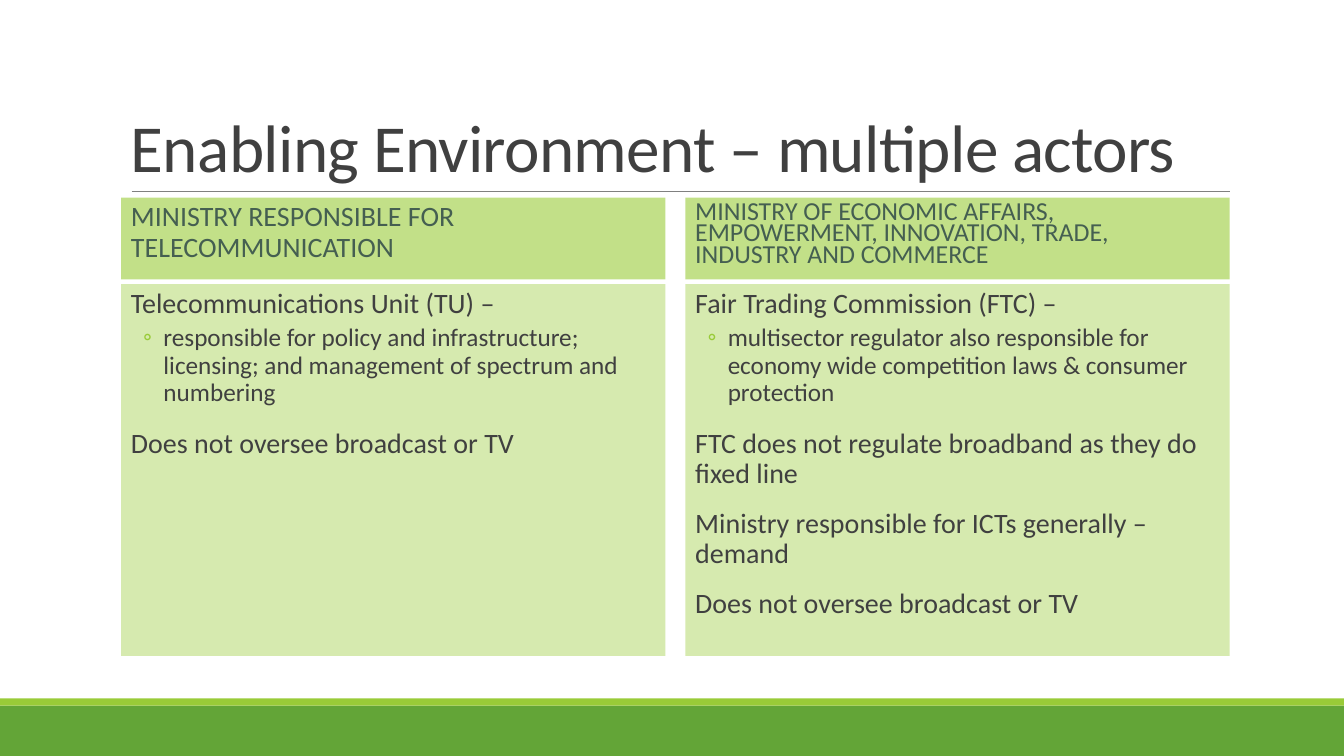
from lxml.etree import SubElement
from pptx import Presentation
from pptx.dml.color import RGBColor
from pptx.enum.shapes import MSO_CONNECTOR, MSO_SHAPE
from pptx.enum.text import MSO_ANCHOR as Anchor, MSO_AUTO_SIZE as AutoSize, PP_ALIGN as Align
from pptx.oxml.ns import qn
from pptx.util import Cm, Pt

COLORS = {
    "title": "404040", "text": "404040", "heading": "455F51", "rule": "808080",
    "heading_fill": "C2E088", "body_fill": "D6EAAF", "accent": "99CB38", "footer": "63A537",
}
SLIDE_WIDTH, SLIDE_HEIGHT = 33.87, 19.05
MARGIN, COLUMN_WIDTH, COLUMN_GAP = 3.05, 13.72, 0.5
COLUMN_TOP, COLUMN_HEIGHT = 4.98, 11.55
HEADING_HEIGHT, HEADING_GAP = 2.06, 0.12
POINT, DETAIL = 0, 1

COLUMNS = [
    {
        "heading": "MINISTRY RESPONSIBLE FOR TELECOMMUNICATION",
        "heading_format": {"size": 20, "line_spacing": 0.9},
        "items": [
            (POINT, "Telecommunications Unit (TU) –"),
            (DETAIL, "responsible for policy and infrastructure; licensing; "
                     "and management of spectrum and numbering"),
            (POINT, "Does not oversee broadcast or TV"),
        ],
    },
    {
        "heading": "MINISTRY OF ECONOMIC AFFAIRS, EMPOWERMENT, INNOVATION, TRADE, "
                   "INDUSTRY AND COMMERCE",
        "heading_format": {"size": 18.5, "line_spacing": 0.7},
        "items": [
            (POINT, "Fair Trading Commission (FTC) –"),
            (DETAIL, "multisector regulator also responsible for economy wide "
                     "competition laws & consumer protection"),
            (POINT, "FTC does not regulate broadband as they do fixed line"),
            (POINT, "Ministry responsible for ICTs generally – demand"),
            (POINT, "Does not oversee broadcast or TV"),
        ],
    },
]
ITEM_FORMATS = {
    POINT: {"size": 20, "before": 12, "after": 2, "indent": 0.25},
    DETAIL: {"size": 18, "before": 2, "after": 4, "indent": 1.07, "hanging": 0.51, "bullet": "◦"},
}


def rgb(name):
    """Return the named colour."""
    return RGBColor.from_string(COLORS[name])


def fill_shape(shape, color):
    """Give a shape a plain fill."""
    shape.fill.solid()
    shape.fill.fore_color.rgb = rgb(color)


def place(shape, left, top, width, height):
    """Move a placeholder to a box given in centimetres."""
    shape.left, shape.top, shape.width, shape.height = map(Cm, (left, top, width, height))


def prepare_frame(shape, anchor=Anchor.TOP, side_inset=0.25):
    """Set the wrapping, anchor and insets of a text frame."""
    frame = shape.text_frame
    frame.word_wrap = True
    frame.auto_size = AutoSize.NONE
    frame.vertical_anchor = anchor
    frame.margin_left = frame.margin_right = Cm(side_inset)
    frame.margin_top = frame.margin_bottom = Cm(0.13)
    return frame


def write_text(paragraph, text, *, size, color="text", level=0, line_spacing=0.9, before=0,
               after=0, indent=0, hanging=0, bullet=None, tracking=None):
    """Write one formatted paragraph."""
    paragraph.level = level
    paragraph.alignment = Align.LEFT
    paragraph.line_spacing = line_spacing
    paragraph.space_before, paragraph.space_after = Pt(before), Pt(after)
    properties = paragraph._p.get_or_add_pPr()
    properties.set("marL", str(Cm(indent)))
    properties.set("indent", str(-Cm(hanging)))
    if bullet:
        bullet_color = SubElement(properties, qn("a:buClr"))
        SubElement(bullet_color, qn("a:srgbClr"), val=COLORS["accent"])
        SubElement(properties, qn("a:buFont"), typeface="Calibri")
        SubElement(properties, qn("a:buChar"), char=bullet)
    else:
        SubElement(properties, qn("a:buNone"))
    run = paragraph.add_run()
    run.text = text
    run.font.name, run.font.size, run.font.bold = "Calibri", Pt(size), False
    run.font.color.rgb = rgb(color)
    if tracking is not None:
        run.font._element.set("spc", str(int(tracking * 100)))


def add_footer(slide, left, top, width, height):
    """Draw the two footer bands, the thin one on top."""
    thin = 0.18
    bands = [("footer", top + thin, height - thin), ("accent", top, thin)]
    for color, band_top, band_height in bands:
        band = slide.shapes.add_shape(
            MSO_SHAPE.RECTANGLE, Cm(left), Cm(band_top), Cm(width), Cm(band_height))
        band.shadow.inherit = False
        fill_shape(band, color)
        band.line.fill.background()


def add_title(slide, text, left, top, width, height):
    """Write the title and draw the rule along the bottom of its box."""
    title = slide.shapes.title
    place(title, left, top, width, height)
    frame = prepare_frame(title, Anchor.BOTTOM)
    write_text(frame.paragraphs[0], text, size=48, color="title", line_spacing=0.85, tracking=-0.5)
    rule = slide.shapes.add_connector(
        MSO_CONNECTOR.STRAIGHT, Cm(left + 0.27), Cm(top + height),
        Cm(left + width), Cm(top + height))
    rule.line.color.rgb = rgb("rule")
    rule.line.width = Pt(0.5)
    SubElement(rule._element.spPr, qn("a:effectLst"))


def fill_column(heading, body, column, left, top, width, height):
    """Place a heading above its list and write both."""
    place(heading, left, top, width, HEADING_HEIGHT)
    fill_shape(heading, "heading_fill")
    write_text(prepare_frame(heading).paragraphs[0], column["heading"], color="heading",
               before=12, after=2, **column["heading_format"])

    offset = HEADING_HEIGHT + HEADING_GAP
    place(body, left, top + offset, width, height - offset)
    fill_shape(body, "body_fill")
    frame = prepare_frame(body, side_inset=0)
    for index, (level, text) in enumerate(column["items"]):
        paragraph = frame.add_paragraph() if index else frame.paragraphs[0]
        write_text(paragraph, text, level=level, **ITEM_FORMATS[level])


def main():
    """Build and save the slide."""
    presentation = Presentation()
    presentation.slide_width, presentation.slide_height = Cm(SLIDE_WIDTH), Cm(SLIDE_HEIGHT)
    slide = presentation.slides.add_slide(presentation.slide_layouts.get_by_name("Comparison"))
    add_footer(slide, 0, 17.6, SLIDE_WIDTH, 1.45)
    add_title(slide, "Enabling Environment – multiple actors", MARGIN, 0.79, 27.94, 4.04)
    for index, column in enumerate(COLUMNS):
        heading, body = (slide.placeholders[2 * index + part] for part in (1, 2))
        left = MARGIN + index * (COLUMN_WIDTH + COLUMN_GAP)
        fill_column(heading, body, column, left, COLUMN_TOP, COLUMN_WIDTH, COLUMN_HEIGHT)
    presentation.save("out.pptx")


if __name__ == "__main__":
    main()
